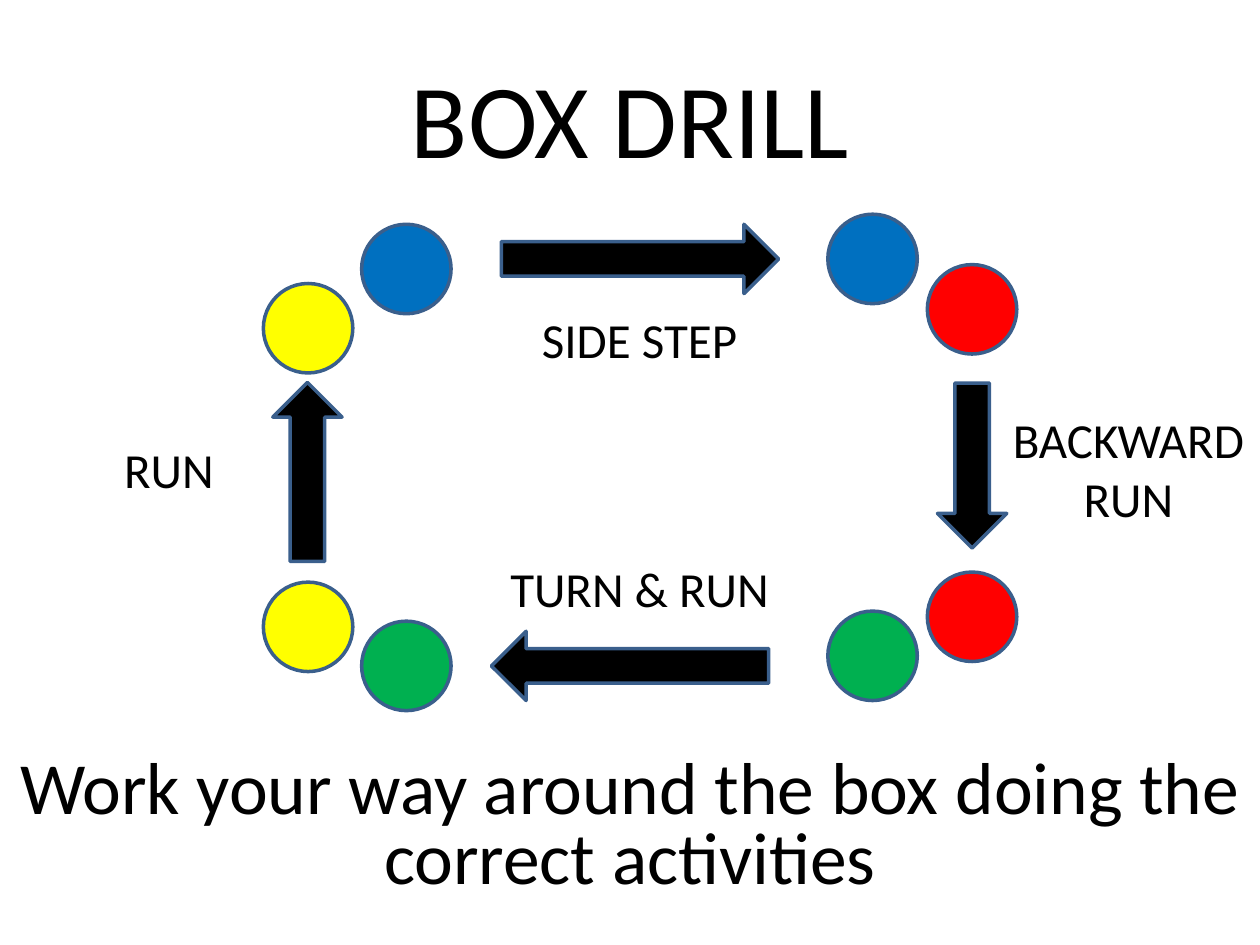
from dataclasses import dataclass

from pptx import Presentation
from pptx.dml.color import RGBColor
from pptx.enum.shapes import MSO_SHAPE
from pptx.enum.text import MSO_ANCHOR, MSO_AUTO_SIZE, PP_ALIGN
from pptx.shapes.autoshape import Shape
from pptx.slide import Slide
from pptx.util import Emu, Pt

EMU_PER_PX = 9144


@dataclass(frozen=True)
class Theme:
    font: str = "Calibri"
    ink: str = "000000"
    outline: str = "3A5F8C"
    blue: str = "0070C0"
    red: str = "FF0000"
    green: str = "00B050"
    yellow: str = "FFFF00"
    outline_pt: int = 2
    title_pt: int = 60
    instruction_pt: int = 42
    activity_pt: int = 28


@dataclass(frozen=True)
class Box:
    left: int
    top: int
    width: int
    height: int

    def emu(self) -> tuple[Emu, ...]:
        lengths = (self.left, self.top, self.width, self.height)
        return tuple(Emu(length * EMU_PER_PX) for length in lengths)


@dataclass(frozen=True)
class Cone:
    left: int
    top: int
    color: str


@dataclass(frozen=True)
class Leg:
    arrow: Box
    rotation: int
    label: Box
    activity: tuple[str, ...]


THEME = Theme()
CONE_SIZE = 71

CONES = (
    Cone(287, 493, THEME.green),
    Cone(736, 454, THEME.red),
    Cone(657, 485, THEME.green),
    Cone(736, 210, THEME.red),
    Cone(657, 170, THEME.blue),
    Cone(287, 178, THEME.blue),
    Cone(209, 225, THEME.yellow),
    Cone(209, 462, THEME.yellow),
)

LEGS = (
    Leg(Box(398, 178, 220, 55), 0, Box(350, 241, 315, 57), ("SIDE STEP",)),
    Leg(Box(706, 342, 131, 55), 90, Box(791, 320, 209, 104), ("BACKWARD", "RUN")),
    Leg(Box(390, 501, 220, 55), 180, Box(350, 438, 315, 57), ("TURN & RUN",)),
    Leg(Box(173, 347, 142, 55), 270, Box(67, 344, 134, 57), ("RUN",)),
)


def draw_shape(slide: Slide, preset: MSO_SHAPE, box: Box, color: str) -> Shape:
    shape = slide.shapes.add_shape(preset, *box.emu())
    shape.shadow.inherit = False
    shape.fill.solid()
    shape.fill.fore_color.rgb = RGBColor.from_string(color)
    shape.line.color.rgb = RGBColor.from_string(THEME.outline)
    shape.line.width = Pt(THEME.outline_pt)
    return shape


def draw_text(
    slide: Slide,
    box: Box,
    lines: tuple[str, ...],
    size: int,
    anchor: MSO_ANCHOR = MSO_ANCHOR.MIDDLE,
    auto_size: MSO_AUTO_SIZE = MSO_AUTO_SIZE.NONE,
    line_spacing: float | None = None,
) -> None:
    frame = slide.shapes.add_textbox(*box.emu()).text_frame
    frame.word_wrap = True
    frame.vertical_anchor = anchor
    frame.auto_size = auto_size
    for index, line in enumerate(lines):
        paragraph = frame.add_paragraph() if index else frame.paragraphs[0]
        paragraph.alignment = PP_ALIGN.CENTER
        paragraph.line_spacing = line_spacing
        run = paragraph.add_run()
        run.text = line
        run.font.name = THEME.font
        run.font.size = Pt(size)
        run.font.color.rgb = RGBColor.from_string(THEME.ink)


def draw_cone(slide: Slide, cone: Cone) -> None:
    box = Box(cone.left, cone.top, CONE_SIZE, CONE_SIZE)
    draw_shape(slide, MSO_SHAPE.OVAL, box, cone.color)


def draw_leg(slide: Slide, leg: Leg) -> None:
    arrow = draw_shape(slide, MSO_SHAPE.RIGHT_ARROW, leg.arrow, THEME.ink)
    arrow.rotation = leg.rotation
    draw_text(
        slide,
        leg.label,
        leg.activity,
        THEME.activity_pt,
        anchor=MSO_ANCHOR.TOP,
        auto_size=MSO_AUTO_SIZE.SHAPE_TO_FIT_TEXT,
    )


def main() -> None:
    deck = Presentation()
    deck.slide_width = Emu(1000 * EMU_PER_PX)
    deck.slide_height = Emu(750 * EMU_PER_PX)
    slide = deck.slides.add_slide(deck.slide_layouts[6])

    draw_text(slide, Box(50, 30, 900, 125), ("BOX DRILL",), THEME.title_pt)
    for cone in CONES:
        draw_cone(slide, cone)
    for leg in LEGS:
        draw_leg(slide, leg)
    draw_text(
        slide,
        Box(0, 595, 1000, 125),
        ("Work your way around the box doing the correct activities",),
        THEME.instruction_pt,
        line_spacing=0.8,
    )
    deck.save("out.pptx")


if __name__ == "__main__":
    main()
